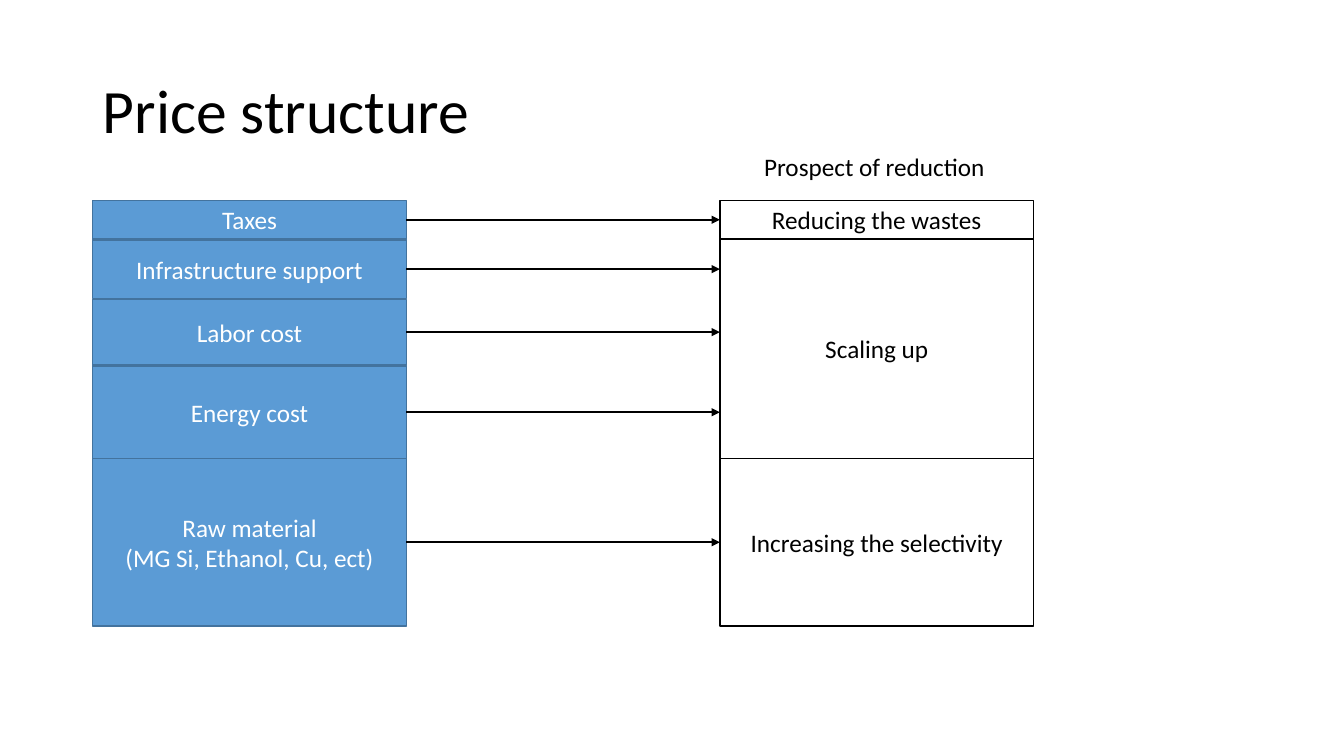
from dataclasses import dataclass

from lxml.etree import SubElement
from pptx import Presentation
from pptx.dml.color import RGBColor
from pptx.enum.shapes import MSO_CONNECTOR as Link, MSO_SHAPE as Shape
from pptx.enum.text import MSO_ANCHOR as Anchor, PP_ALIGN as Align
from pptx.oxml.ns import qn
from pptx.slide import Slide
from pptx.text.text import TextFrame
from pptx.util import Inches, Pt

BLACK = RGBColor(0x00, 0x00, 0x00)
WHITE = RGBColor(0xFF, 0xFF, 0xFF)
BLUE = RGBColor(0x5B, 0x9B, 0xD5)
NAVY = RGBColor(0x43, 0x73, 0x9E)

FONT = "Calibri"
WIDTH = 3.11


@dataclass(frozen=True)
class Block:
    text: str
    top: float
    height: float


@dataclass(frozen=True)
class Stack:
    left: float
    fill: RGBColor
    line: RGBColor
    ink: RGBColor
    blocks: tuple[Block, ...]


COSTS = Stack(0.92, BLUE, NAVY, WHITE, (
    Block("Taxes", 1.99, 0.38),
    Block("Infrastructure support", 2.38, 0.58),
    Block("Labor cost", 2.97, 0.65),
    Block("Energy cost", 3.63, 0.92),
    Block("Raw material\n(MG Si, Ethanol, Cu, ect)", 4.55, 1.66),
))
CUTS = Stack(7.14, WHITE, BLACK, BLACK, (
    Block("Reducing the wastes", 1.99, 0.38),
    Block("Scaling up", 2.37, 2.18),
    Block("Increasing the selectivity", 4.55, 1.66),
))


def write(frame: TextFrame, text: str, size: int, ink: RGBColor, align: Align) -> None:
    frame.text = text
    for para in frame.paragraphs:
        para.alignment = align
        para.font.name = FONT
        para.font.size = Pt(size)
        para.font.color.rgb = ink


def add_title(slide: Slide) -> None:
    title = slide.shapes.title
    title.left, title.top = Inches(0.92), Inches(0.4)
    title.width, title.height = Inches(11.5), Inches(1.45)
    frame = title.text_frame
    frame.vertical_anchor = Anchor.MIDDLE
    write(frame, "Price structure", 44, BLACK, Align.LEFT)
    frame.paragraphs[0].line_spacing = 0.9


def add_stack(slide: Slide, stack: Stack) -> None:
    for block in stack.blocks:
        box = slide.shapes.add_shape(
            Shape.RECTANGLE, Inches(stack.left), Inches(block.top),
            Inches(WIDTH), Inches(block.height))
        box.shadow.inherit = False
        box.fill.solid()
        box.fill.fore_color.rgb = stack.fill
        box.line.color.rgb = stack.line
        box.line.width = Pt(1)
        box.text_frame.vertical_anchor = Anchor.MIDDLE
        write(box.text_frame, block.text, 18, stack.ink, Align.CENTER)


def add_label(slide: Slide) -> None:
    label = slide.shapes.add_textbox(
        Inches(7.48), Inches(1.45), Inches(2.42), Inches(0.4))
    label.text_frame.word_wrap = False
    write(label.text_frame, "Prospect of reduction", 18, BLACK, Align.LEFT)


def add_arrow(slide: Slide, block: Block) -> None:
    """Lead from the middle of a cost block to the stack of cuts."""
    mid = Inches(block.top + block.height / 2)
    arrow = slide.shapes.add_connector(
        Link.STRAIGHT, Inches(COSTS.left + WIDTH), mid, Inches(CUTS.left), mid)
    arrow.line.color.rgb = BLACK
    arrow.line.width = Pt(1.5)
    SubElement(arrow.line._get_or_add_ln(), qn("a:tailEnd"), type="triangle")
    SubElement(arrow._element.spPr, qn("a:effectLst"))


def main() -> None:
    deck = Presentation()
    deck.slide_width, deck.slide_height = Inches(13.33), Inches(7.5)
    slide = deck.slides.add_slide(deck.slide_layouts.get_by_name("Title Only"))
    add_title(slide)
    add_stack(slide, COSTS)
    add_label(slide)
    add_stack(slide, CUTS)
    for block in COSTS.blocks:
        add_arrow(slide, block)
    deck.save("out.pptx")


if __name__ == "__main__":
    main()
